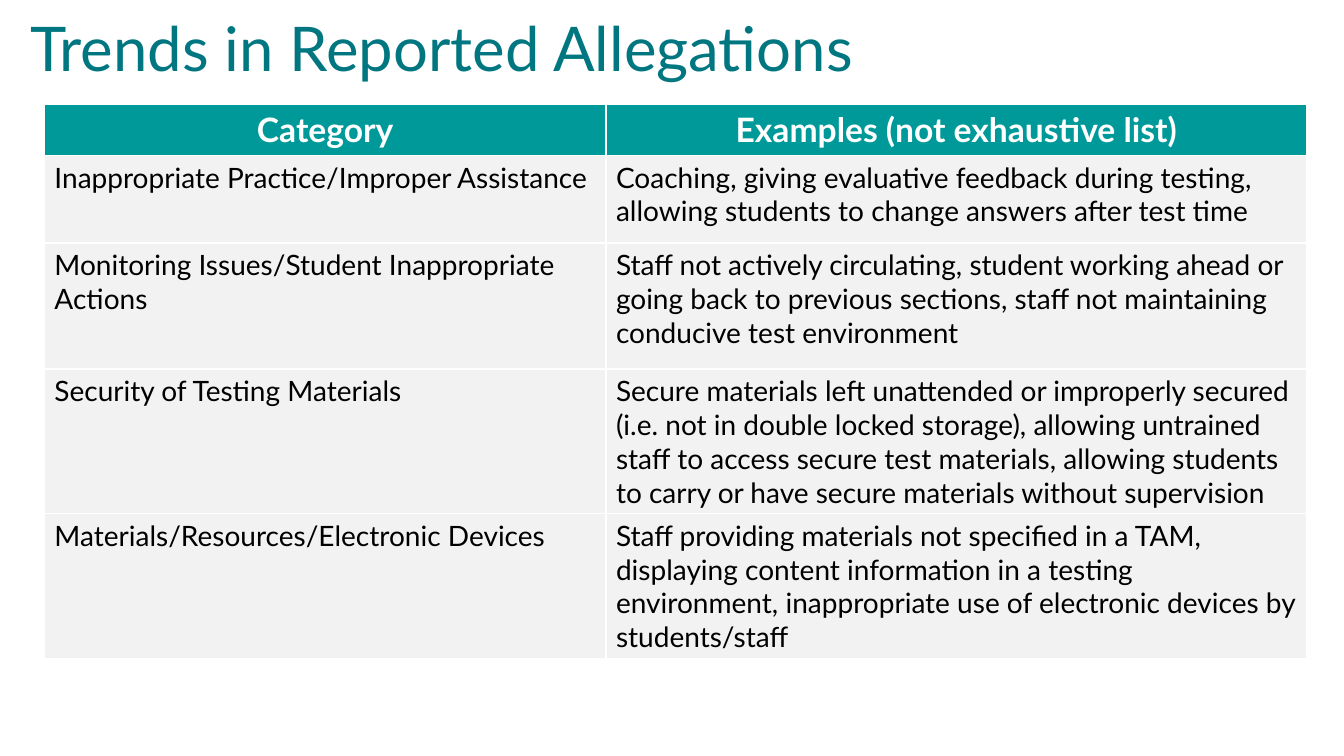
from pptx import Presentation
from pptx.dml.color import RGBColor
from pptx.enum.text import MSO_ANCHOR, PP_ALIGN
from pptx.util import Inches, Pt

HEADING = "Trends in Reported Allegations"
HEADERS = ("Category", "Examples (not exhaustive list)")
ALLEGATIONS = [
    ("Inappropriate Practice/Improper Assistance",
     "Coaching, giving evaluative feedback during testing, allowing students "
     "to change answers after test time"),
    ("Monitoring Issues/Student Inappropriate Actions",
     "Staff not actively circulating, student working ahead or going back to "
     "previous sections, staff not maintaining conducive test environment"),
    ("Security of Testing Materials",
     "Secure materials left unattended or improperly secured (i.e. not in "
     "double locked storage), allowing untrained staff to access secure test "
     "materials, allowing students to carry or have secure materials without "
     "supervision"),
    ("Materials/Resources/Electronic Devices",
     "Staff providing materials not specified in a TAM, displaying content "
     "information in a testing environment, inappropriate use of electronic "
     "devices by students/staff"),
]
COLUMN_WIDTHS = (5.57, 6.95)
ROW_HEIGHTS = (0.5, 0.87, 1.25, 1.25, 1.25)
FONT = "Lato"


def color(value):
    return RGBColor.from_string(value)


def style_text(paragraph, size, text_color, bold=False):
    for run in paragraph.runs:
        run.font.name = FONT
        run.font.size = Pt(size)
        run.font.bold = bold
        run.font.color.rgb = color(text_color)


def add_heading(slide):
    heading = slide.shapes.add_textbox(
        Inches(0.2), Inches(0.15), Inches(13.53), Inches(0.72))
    frame = heading.text_frame
    frame.word_wrap = True
    frame.vertical_anchor = MSO_ANCHOR.MIDDLE
    frame.text = HEADING
    frame.paragraphs[0].line_spacing = 0.9
    style_text(frame.paragraphs[0], 44, "007780")


def add_allegations(slide):
    rows = [HEADERS, *ALLEGATIONS]
    allegations = slide.shapes.add_table(
        len(rows), len(HEADERS), Inches(0.44), Inches(1.04),
        Inches(sum(COLUMN_WIDTHS)), Inches(sum(ROW_HEIGHTS))).table
    allegations.horz_banding = False
    for column, width in zip(allegations.columns, COLUMN_WIDTHS):
        column.width = Inches(width)
    for r, (row, height) in enumerate(zip(rows, ROW_HEIGHTS)):
        allegations.rows[r].height = Inches(height)
        for c, wording in enumerate(row):
            cell = allegations.cell(r, c)
            cell.fill.solid()
            cell.text_frame.text = wording
            paragraph = cell.text_frame.paragraphs[0]
            if r == 0:
                cell.fill.fore_color.rgb = color("009999")
                paragraph.alignment = PP_ALIGN.CENTER
                style_text(paragraph, 24, "FFFFFF", bold=True)
            else:
                cell.fill.fore_color.rgb = color("F2F2F2")
                style_text(paragraph, 20, "000000")


def main():
    deck = Presentation()
    deck.slide_width = Inches(13.33)
    deck.slide_height = Inches(7.5)
    slide = deck.slides.add_slide(deck.slide_layouts[6])
    add_heading(slide)
    add_allegations(slide)
    deck.save("out.pptx")


if __name__ == "__main__":
    main()
